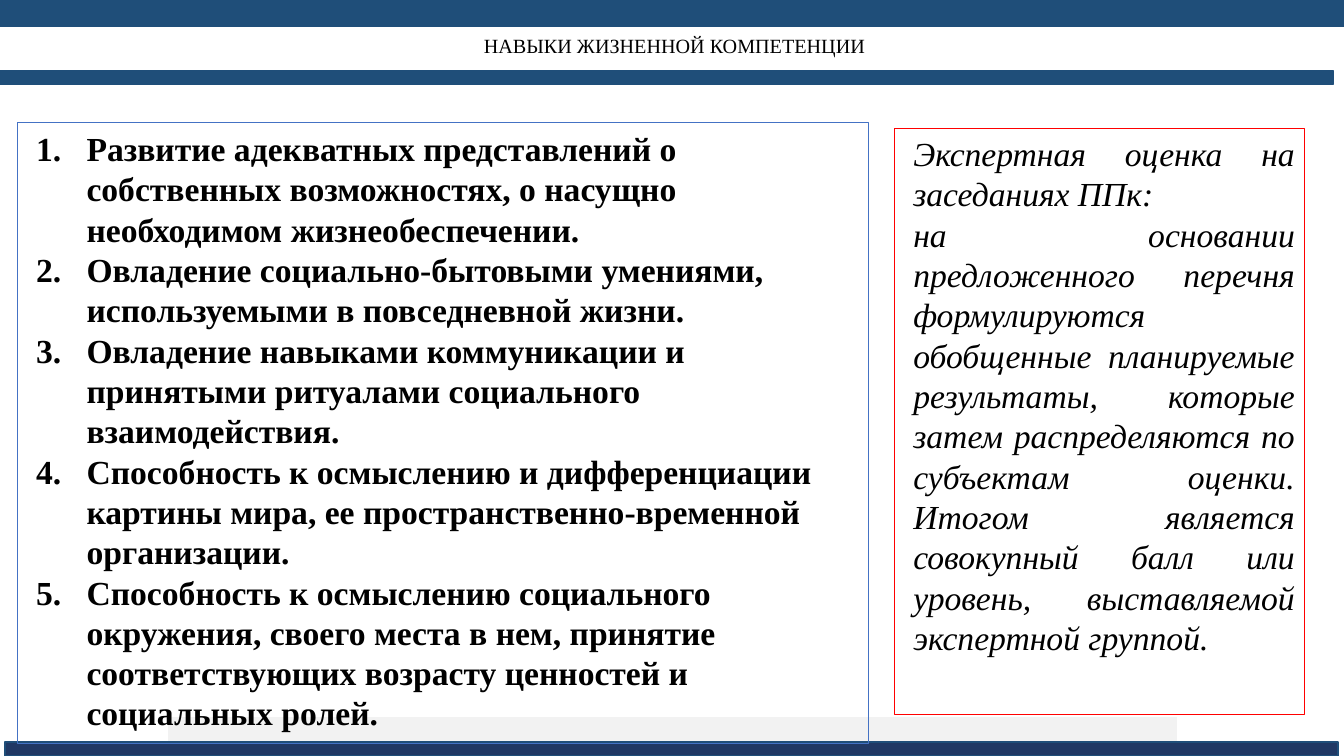
import pptx
import pptx.util
import pptx.dml.color
import pptx.enum.shapes
import pptx.enum.text
import pptx.oxml.ns
import lxml.etree

RGBColor = pptx.dml.color.RGBColor
BLACK = RGBColor(0x00, 0x00, 0x00)
PALE_GREY = RGBColor(0xF2, 0xF2, 0xF2)
STEEL_BLUE = RGBColor(0x1F, 0x4E, 0x79)
NAVY = RGBColor(0x20, 0x38, 0x64)
BLUE = RGBColor(0x44, 0x72, 0xC4)
RED = RGBColor(0xFF, 0x00, 0x00)

Align = pptx.enum.text.PP_ALIGN
Anchor = pptx.enum.text.MSO_ANCHOR
PX = 9144


def add_box(left, top, width, height, fill=None, line=None, line_width=1):
    box = page.shapes.add_shape(
        pptx.enum.shapes.MSO_SHAPE.RECTANGLE,
        left * PX, top * PX, width * PX, height * PX)
    box.shadow.inherit = False
    if fill is None:
        box.fill.background()
    else:
        box.fill.solid()
        box.fill.fore_color.rgb = fill
    if line is None:
        box.line.fill.background()
    else:
        box.line.color.rgb = line
        box.line.width = pptx.util.Pt(line_width)
    return box


def write_text(box, texts, size=24, bold=False, italic=False, align=Align.LEFT,
               anchor=Anchor.TOP, margin=0, hanging=0, numbered=False, spacing=1.0):
    frame = box.text_frame
    frame.word_wrap = True
    frame.vertical_anchor = anchor
    for index, text in enumerate(texts):
        para = frame.paragraphs[0] if index == 0 else frame.add_paragraph()
        para.alignment = align
        para.line_spacing = spacing
        properties = para._p.get_or_add_pPr()
        properties.set("marL", str(margin * PX))
        properties.set("indent", str(-hanging * PX))
        if numbered:
            number = lxml.etree.SubElement(properties, pptx.oxml.ns.qn("a:buAutoNum"))
            number.set("type", "arabicPeriod")
        span = para.add_run()
        span.text = text
        span.font.name = "Times New Roman"
        span.font.size = pptx.util.Pt(size)
        span.font.bold = bold
        span.font.italic = italic
        span.font.color.rgb = BLACK


deck = pptx.Presentation()
deck.slide_width = 1333 * PX
deck.slide_height = 750 * PX
page = deck.slides.add_slide(deck.slide_layouts[6])

for left, top, width, height, fill, line in [
    (167, 712, 1000, 30, PALE_GREY, PALE_GREY),
    (0, 0, 1333, 26, STEEL_BLUE, STEEL_BLUE),
    (5, 736, 1322, 14, NAVY, STEEL_BLUE),
    (0, 70, 1322, 14, STEEL_BLUE, STEEL_BLUE),
]:
    add_box(left, top, width, height, fill=fill, line=line)

title = page.shapes.add_textbox(94 * PX, 40 * PX, 1150 * PX, 14 * PX)
title.text_frame.margin_top = title.text_frame.margin_bottom = 0
write_text(title, ["НАВЫКИ ЖИЗНЕННОЙ КОМПЕТЕНЦИИ"], size=14.4,
           align=Align.CENTER, anchor=Anchor.MIDDLE, spacing=0.9)

skills = add_box(17, 122, 844, 616, line=BLUE, line_width=0.75)
write_text(skills, [
    "Развитие адекватных представлений о собственных возможностях, "
    "о насущно необходимом жизнеобеспечении.",
    "Овладение социально-бытовыми умениями, используемыми в повседневной жизни.",
    "Овладение навыками коммуникации и принятыми ритуалами социального взаимодействия.",
    "Способность к осмыслению и дифференциации картины мира, "
    "ее пространственно-временной организации.",
    "Способность к осмыслению социального окружения, своего места в нем, "
    "принятие соответствующих возрасту ценностей и социальных ролей.",
], bold=True, margin=59, hanging=50, numbered=True)

assessment = add_box(887, 127, 407, 582, line=RED, line_width=0.75)
write_text(assessment, [
    "Экспертная оценка на заседаниях ППк:",
    "на основании предложенного перечня формулируются обобщенные планируемые "
    "результаты, которые затем распределяются по субъектам оценки. Итогом является "
    "совокупный балл или уровень, выставляемой экспертной группой.",
], italic=True, align=Align.JUSTIFY, margin=9)

deck.save("out.pptx")
